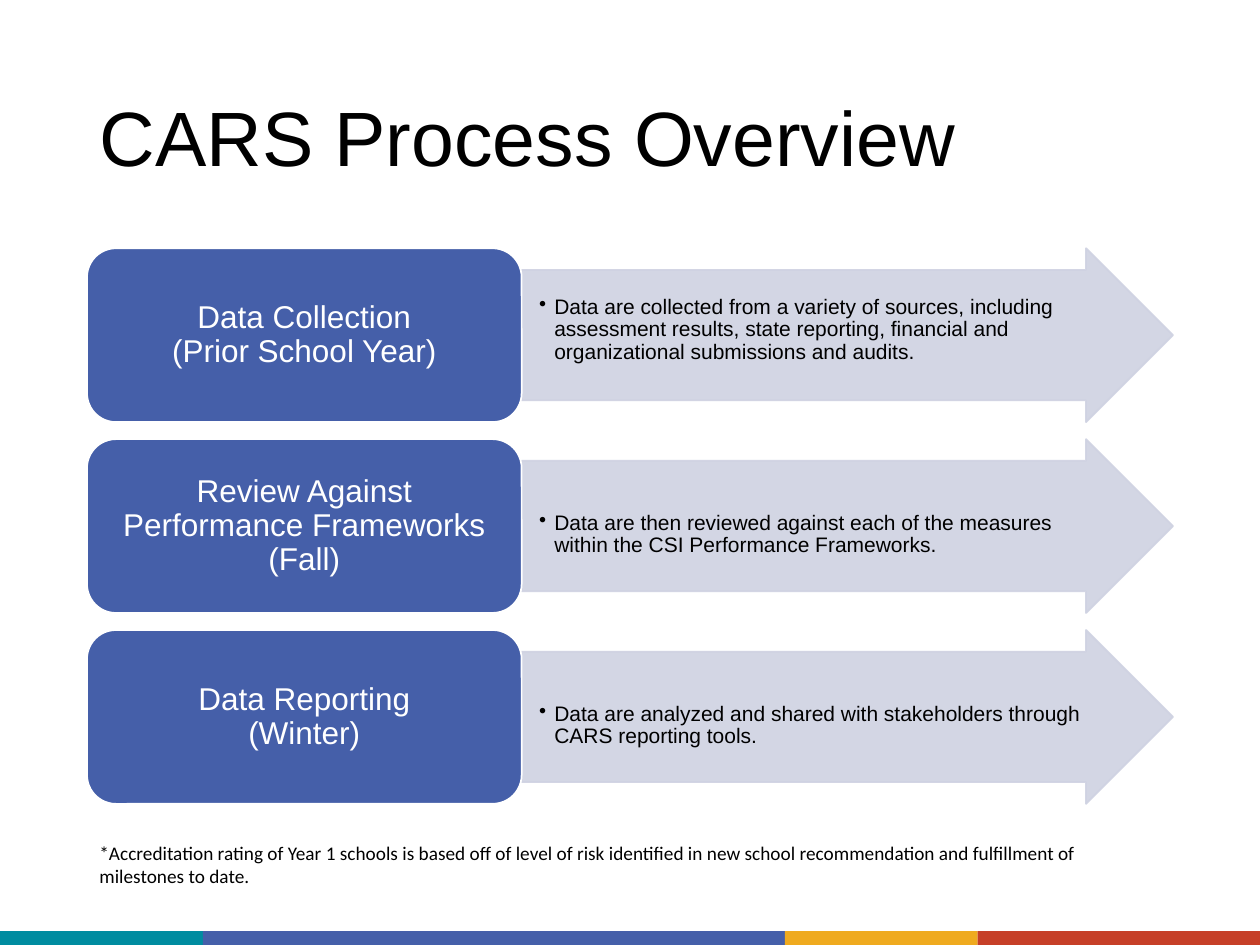
from dataclasses import dataclass

from lxml import etree
from pptx import Presentation
from pptx import util as u
from pptx.dml.color import RGBColor
from pptx.enum import shapes, text
from pptx.oxml import ns


@dataclass(frozen=True)
class Theme:
    blue: str = "455FA9"
    pale: str = "CFD2E2"
    teal: str = "008CA0"
    gold: str = "EFAA1F"
    red: str = "C63F28"
    black: str = "000000"
    white: str = "FFFFFF"
    font: str = "Arial"
    note_font: str = "Calibri"
    title_size: int = 44
    step_size: int = 18
    detail_size: int = 12
    note_size: int = 11


LEFT, WIDTH = 0.69, 8.62
STEP_WIDTH, ROW_HEIGHT = 3.45, 1.38
FIRST_ROW, ROW_PITCH = 1.97, 1.515
BAND_TOP, BAND_HEIGHT = 7.39, 0.11

# Step lines, detail, and distance from the row top to the detail text
STEPS = [
    (["Data Collection", "(Prior School Year)"],
     "Data are collected from a variety of sources, including assessment results, "
     "state reporting, financial and organizational submissions and audits.", 0.37),
    (["Review Against Performance Frameworks (Fall)"],
     "Data are then reviewed against each of the measures within the CSI "
     "Performance Frameworks.", 0.57),
    (["Data Reporting", "(Winter)"],
     "Data are analyzed and shared with stakeholders through CARS reporting tools.", 0.57),
]
NOTE = ("*Accreditation rating of Year 1 schools is based off of level of risk identified "
        "in new school recommendation and fulfillment of milestones to date.")


class SlideBuilder:
    def __init__(self, slide, theme):
        self.slide = slide
        self.theme = theme

    def add_lines(self, para, lines, size, color, font=None, spacing=0.9):
        para.line_spacing = spacing
        for index, line in enumerate(lines):
            if index:
                para.add_line_break()
            span = para.add_run()
            span.text = line
            span.font.name = font or self.theme.font
            span.font.size = u.Pt(size)
            span.font.color.rgb = RGBColor.from_string(color)

    def set_frame(self, frame, side, top, anchor):
        frame.word_wrap = True
        frame.margin_left = frame.margin_right = u.Inches(side)
        frame.margin_top = frame.margin_bottom = u.Inches(top)
        frame.vertical_anchor = anchor

    def shape(self, kind, left, top, width, height, fill, line=None):
        shape = self.slide.shapes.add_shape(
            kind, u.Inches(left), u.Inches(top), u.Inches(width), u.Inches(height))
        shape.shadow.inherit = False
        shape.fill.solid()
        shape.fill.fore_color.rgb = RGBColor.from_string(fill)
        if line:
            shape.line.color.rgb = RGBColor.from_string(line)
            shape.line.width = u.Pt(1)
        else:
            shape.line.fill.background()
        return shape

    def text_box(self, left, top, width, height):
        return self.slide.shapes.add_textbox(
            u.Inches(left), u.Inches(top), u.Inches(width), u.Inches(height)).text_frame

    def title(self, words):
        title = self.slide.shapes.title
        title.left, title.top = u.Inches(LEFT), u.Inches(0.4)
        title.width, title.height = u.Inches(WIDTH), u.Inches(1.45)
        self.set_frame(title.text_frame, 0.1, 0.05, text.MSO_ANCHOR.MIDDLE)
        para = title.text_frame.paragraphs[0]
        para.alignment = text.PP_ALIGN.LEFT
        self.add_lines(para, [words], self.theme.title_size, self.theme.black)

    def arrow(self, top):
        arrow = self.shape(shapes.MSO_SHAPE.RIGHT_ARROW, LEFT + STEP_WIDTH, top,
                           WIDTH - STEP_WIDTH, ROW_HEIGHT, self.theme.pale, self.theme.pale)
        arrow.adjustments[0] = 0.75
        arrow.adjustments[1] = 0.5
        for color in arrow.element.spPr.iter(ns.qn("a:srgbClr")):
            etree.SubElement(color, ns.qn("a:alpha"), val="90000")

    def detail(self, top, words):
        frame = self.text_box(LEFT + STEP_WIDTH, top, 4.66, 0.6)
        self.set_frame(frame, 0.01, 0.01, text.MSO_ANCHOR.TOP)
        para = frame.paragraphs[0]
        props = para._p.get_or_add_pPr()
        props.set("marL", str(u.Inches(0.25)))
        props.set("indent", str(u.Inches(-0.12)))
        etree.SubElement(props, ns.qn("a:buChar"), char="•")
        self.add_lines(para, [words], self.theme.detail_size, self.theme.black)

    def step(self, top, lines):
        box = self.shape(shapes.MSO_SHAPE.ROUNDED_RECTANGLE, LEFT, top,
                         STEP_WIDTH, ROW_HEIGHT, self.theme.blue, self.theme.white)
        self.set_frame(box.text_frame, 0.07, 0.04, text.MSO_ANCHOR.MIDDLE)
        para = box.text_frame.paragraphs[0]
        para.alignment = text.PP_ALIGN.CENTER
        self.add_lines(para, lines, self.theme.step_size, self.theme.white)

    def note(self, words):
        frame = self.text_box(LEFT, 6.63, WIDTH, 0.47)
        frame.word_wrap = True
        self.add_lines(frame.paragraphs[0], [words], self.theme.note_size,
                       self.theme.black, self.theme.note_font, 1.0)

    def color_band(self, parts):
        left = 0
        for color, width in parts:
            self.shape(shapes.MSO_SHAPE.RECTANGLE, left, BAND_TOP, width, BAND_HEIGHT, color)
            left += width


def main():
    deck = Presentation()
    deck.slide_width, deck.slide_height = u.Inches(10), u.Inches(7.5)
    theme = Theme()
    builder = SlideBuilder(deck.slides.add_slide(deck.slide_layouts[5]), theme)
    builder.color_band([(theme.teal, 1.61), (theme.blue, 4.62),
                        (theme.gold, 1.53), (theme.red, 2.24)])
    builder.title("CARS Process Overview")
    for row, (lines, detail, offset) in enumerate(STEPS):
        top = FIRST_ROW + row * ROW_PITCH
        builder.arrow(top)
        builder.detail(top + offset, detail)
        builder.step(top, lines)
    builder.note(NOTE)
    deck.save("out.pptx")


if __name__ == "__main__":
    main()
